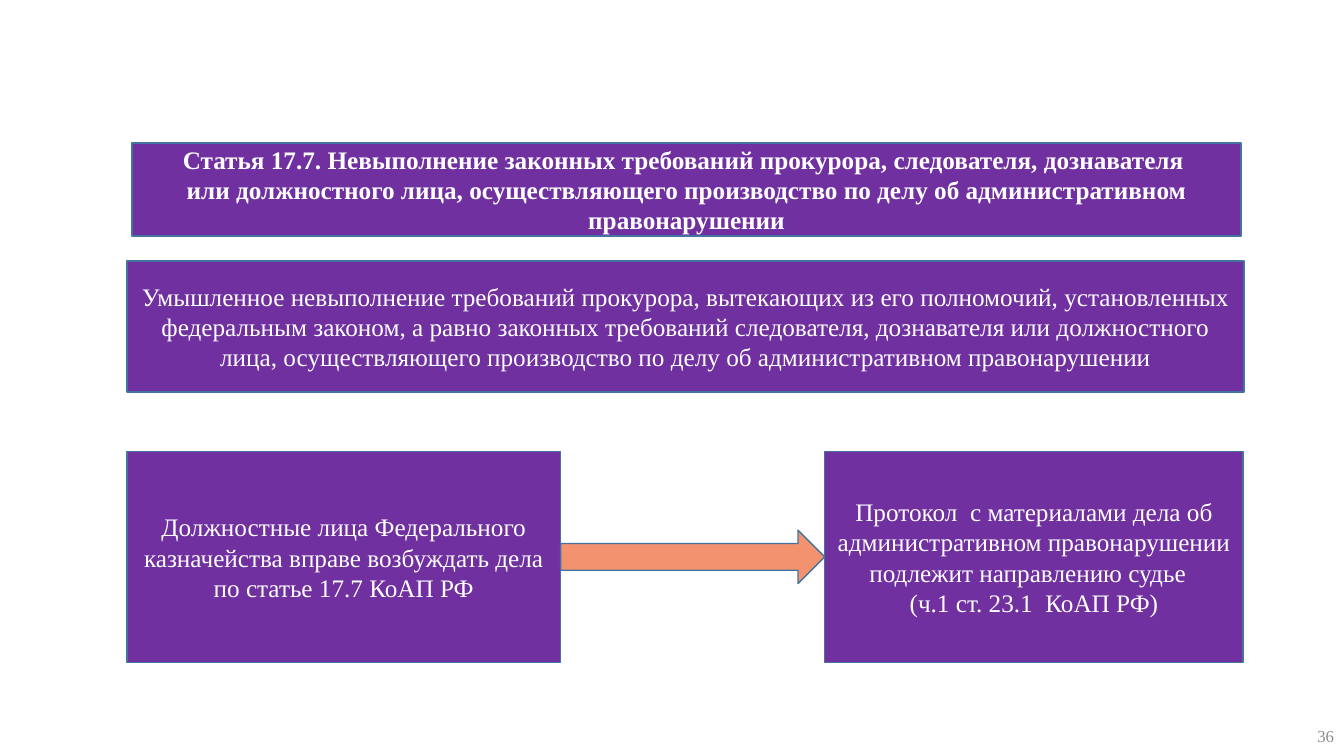
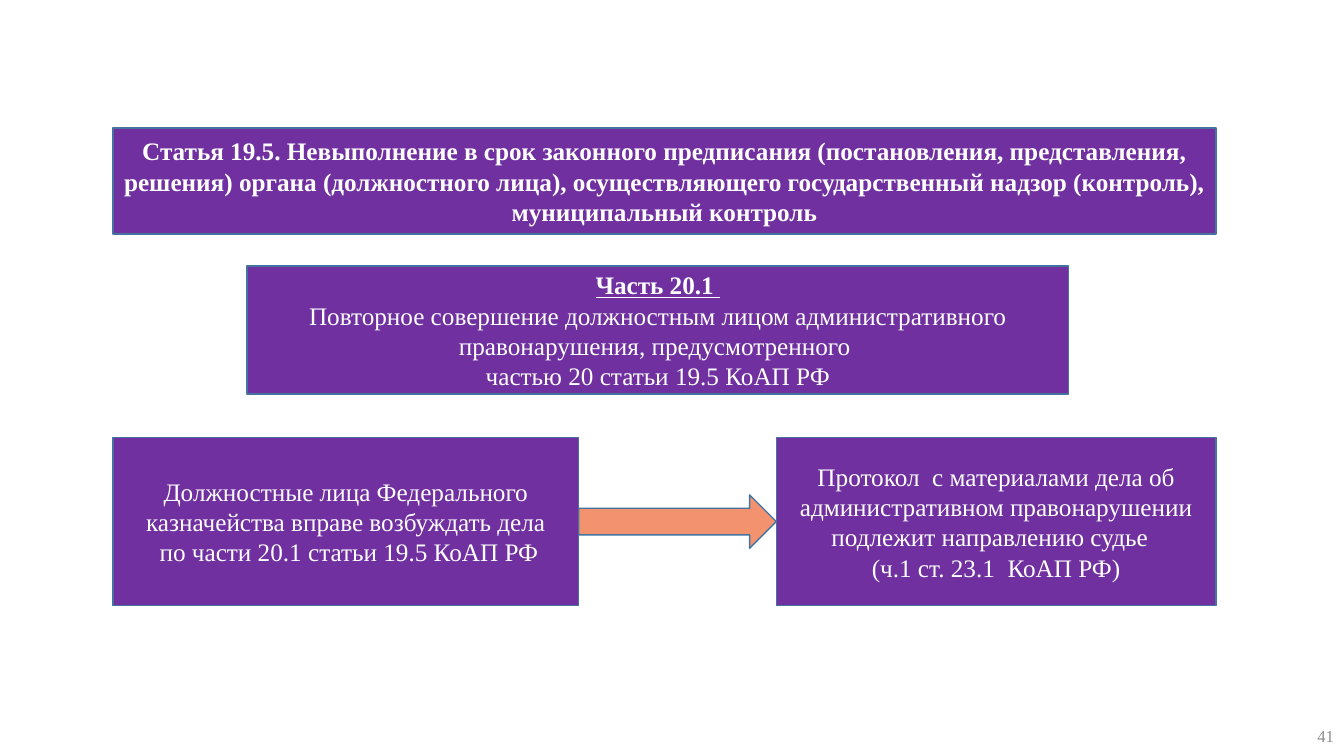
from pptx import Presentation
from pptx.dml.color import RGBColor
from pptx.enum.shapes import MSO_SHAPE
from pptx.enum.text import MSO_ANCHOR, PP_ALIGN
from pptx.util import Inches, Pt

RECT, ARROW = MSO_SHAPE.RECTANGLE, MSO_SHAPE.RIGHT_ARROW
MIDDLE = MSO_ANCHOR.MIDDLE
CENTER, RIGHT = PP_ALIGN.CENTER, PP_ALIGN.RIGHT

FONT = "Times New Roman"
PURPLE, ORANGE, BLUE = "7030A0", "F3926F", "43739E"
WHITE, GRAY = "FFFFFF", "8C8C8C"
ARROW_H = 0.53

# Lines of text are (text, style); style: "" plain, "b" bold, "u" underlined
PROTOCOL = [
    ("Протокол  с материалами дела об административном правонарушении "
     "подлежит направлению судье  ", ""),
    ("(ч.1 ст. 23.1  КоАП РФ)", ""),
]

# Boxes are (left, top, width, height)
SLIDES = [
    {
        "number": "36",
        "title": ((1.31, 1.42, 11, 0.92), [
            ("Статья 17.7. Невыполнение законных требований прокурора, "
             "следователя, дознавателя ", "b"),
            ("или должностного лица, осуществляющего производство по делу "
             "об административном правонарушении", "b"),
        ]),
        "offence": ((1.26, 2.59, 11.08, 1.3), [
            ("Умышленное невыполнение требований прокурора, вытекающих из его "
             "полномочий, установленных федеральным законом, а равно законных "
             "требований следователя, дознавателя или должностного лица, "
             "осуществляющего производство по делу об административном "
             "правонарушении", ""),
        ]),
        "officials": ((1.26, 4.48, 4.3, 2.09), [
            ("Должностные лица Федерального казначейства вправе возбуждать "
             "дела по статье 17.7 КоАП РФ", ""),
        ]),
        "protocol": ((8.18, 4.48, 4.15, 2.09), PROTOCOL),
    },
    {
        "number": "41",
        "title": ((1.12, 1.27, 10.94, 1.05), [
            ("Статья 19.5. Невыполнение в срок законного предписания "
             "(постановления, представления, решения) органа (должностного "
             "лица), осуществляющего государственный надзор (контроль), "
             "муниципальный контроль", "b"),
        ]),
        "offence": ((2.45, 2.64, 8.15, 1.27), [
            ("Часть 20.1 ", "bu"),
            ("Повторное совершение должностным лицом административного "
             "правонарушения, предусмотренного ", ""),
            ("частью 20 статьи 19.5 КоАП РФ", ""),
        ]),
        "officials": ((1.12, 4.34, 4.62, 1.67), [
            ("Должностные лица Федерального казначейства вправе возбуждать "
             "дела", ""),
            (" по части 20.1 статьи 19.5 КоАП РФ", ""),
        ]),
        "protocol": ((7.7, 4.34, 4.36, 1.67), PROTOCOL),
    },
]


def add_block(s, kind, box, fill):
    sp = s.shapes.add_shape(kind, *map(Inches, box))
    sp.shadow.inherit = False
    sp.fill.solid()
    sp.fill.fore_color.rgb = RGBColor.from_string(fill)
    sp.line.color.rgb = RGBColor.from_string(BLUE)
    sp.line.width = Pt(1)
    return sp


def write(sp, lines, size, color, align):
    tf = sp.text_frame
    tf.word_wrap = True
    tf.vertical_anchor = MIDDLE
    for i, (text, style) in enumerate(lines):
        p = tf.paragraphs[0] if i == 0 else tf.add_paragraph()
        p.alignment = align
        r = p.add_run()
        r.text = text
        r.font.name = FONT
        r.font.size = Pt(size)
        r.font.bold = "b" in style
        r.font.underline = "u" in style
        r.font.color.rgb = RGBColor.from_string(color)


prs = Presentation()
prs.slide_width, prs.slide_height = Inches(13.33), Inches(7.5)

for content in SLIDES:
    s = prs.slides.add_slide(prs.slide_layouts[6])

    # Slide number
    number = s.shapes.add_textbox(*map(Inches, (10.33, 7.1, 3, 0.4)))
    write(number, [(content["number"], "")], 12, GRAY, RIGHT)

    # Text boxes
    for name in ("title", "offence", "officials", "protocol"):
        box, lines = content[name]
        write(add_block(s, RECT, box, PURPLE), lines, 18, WHITE, CENTER)

    # Arrow fills the gap between the two lower boxes
    left, top, width, height = content["officials"][0]
    start, end = left + width, content["protocol"][0][0]
    arrow_top = top + (height - ARROW_H) / 2
    add_block(s, ARROW, (start, arrow_top, end - start, ARROW_H), ORANGE)

prs.save("out.pptx")
